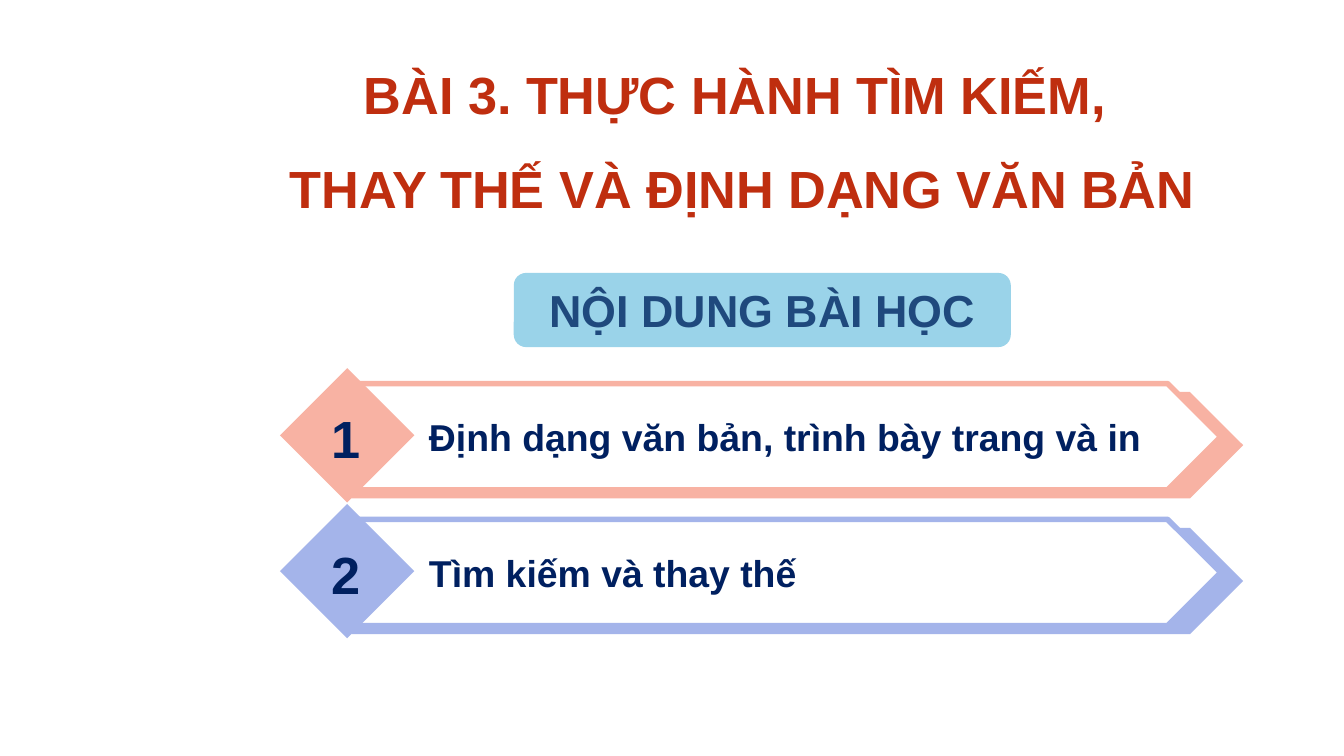
from pptx import Presentation
from pptx import util as u
from pptx.dml.color import RGBColor
from pptx.enum import shapes, text

PX = 9525  # EMU per px, 96 px to the inch
NAVY = "002060"
ROW_PITCH = 97
ROWS = [
    ("F8B2A3", "Định dạng văn bản, trình bày trang và in"),
    ("A4B4EA", "Tìm kiếm và thay thế"),
]


def add_block(kind, left, top, width, height, fill, line=None):
    """Add a flat preset shape, outlined only when a line colour is given."""
    block = page.shapes.add_shape(kind, left * PX, top * PX, width * PX, height * PX)
    block.shadow.inherit = False
    block.fill.solid()
    block.fill.fore_color.rgb = RGBColor.from_string(fill)
    if line:
        block.line.color.rgb = RGBColor.from_string(line)
        block.line.width = u.Pt(3)
    else:
        block.line.fill.background()
    return block


def write(box, lines, size, color, align, anchor, spacing=None):
    """Fill a shape with bold Arial paragraphs, one for each line."""
    frame = box.text_frame
    frame.word_wrap = True
    frame.auto_size = text.MSO_AUTO_SIZE.NONE
    frame.vertical_anchor = anchor
    frame.text = "\n".join(lines)
    for para in frame.paragraphs:
        para.alignment = align
        para.line_spacing = spacing
        para.space_before = u.Pt(0)
        para.font.name = "Arial"
        para.font.size = u.Pt(size)
        para.font.bold = True
        para.font.color.rgb = RGBColor.from_string(color)


CENTER, LEFT = text.PP_ALIGN.CENTER, text.PP_ALIGN.LEFT
MIDDLE, TOP = text.MSO_ANCHOR.MIDDLE, text.MSO_ANCHOR.TOP
PLATE = shapes.MSO_SHAPE.PENTAGON

deck = Presentation()
deck.slide_width, deck.slide_height = 960 * PX, 540 * PX
page = deck.slides.add_slide(deck.slide_layouts[5])

title = page.shapes.title
title.left, title.top, title.width, title.height = 50 * PX, 59 * PX, 960 * PX, 60 * PX
write(title, ["BÀI 3. THỰC HÀNH TÌM KIẾM, ", "THAY THẾ VÀ ĐỊNH DẠNG VĂN BẢN"],
      28, "BF2E0F", CENTER, MIDDLE, 1.5)

for index, (color, topic) in enumerate(ROWS):
    top = 263 + index * ROW_PITCH
    add_block(PLATE, 251, top + 17, 637, 76, color)
    add_block(PLATE, 251, top + 11, 621, 76, "FFFFFF", color)
    add_block(shapes.MSO_SHAPE.DIAMOND, 200, top, 96, 96, color)

    number = page.shapes.add_textbox(226 * PX, (top + 22) * PX, 42 * PX, 55 * PX)
    write(number, [str(index + 1)], 28, NAVY, CENTER, MIDDLE)

    label = page.shapes.add_textbox(297 * PX, (top + 28) * PX, 533 * PX, 42 * PX)
    write(label, [topic], 20, NAVY, LEFT, TOP)

badge = add_block(shapes.MSO_SHAPE.ROUNDED_RECTANGLE, 367, 195, 355, 53, "9AD3E9")
write(badge, ["NỘI DUNG BÀI HỌC"], 24, "1F497D", CENTER, MIDDLE)

deck.save("out.pptx")
